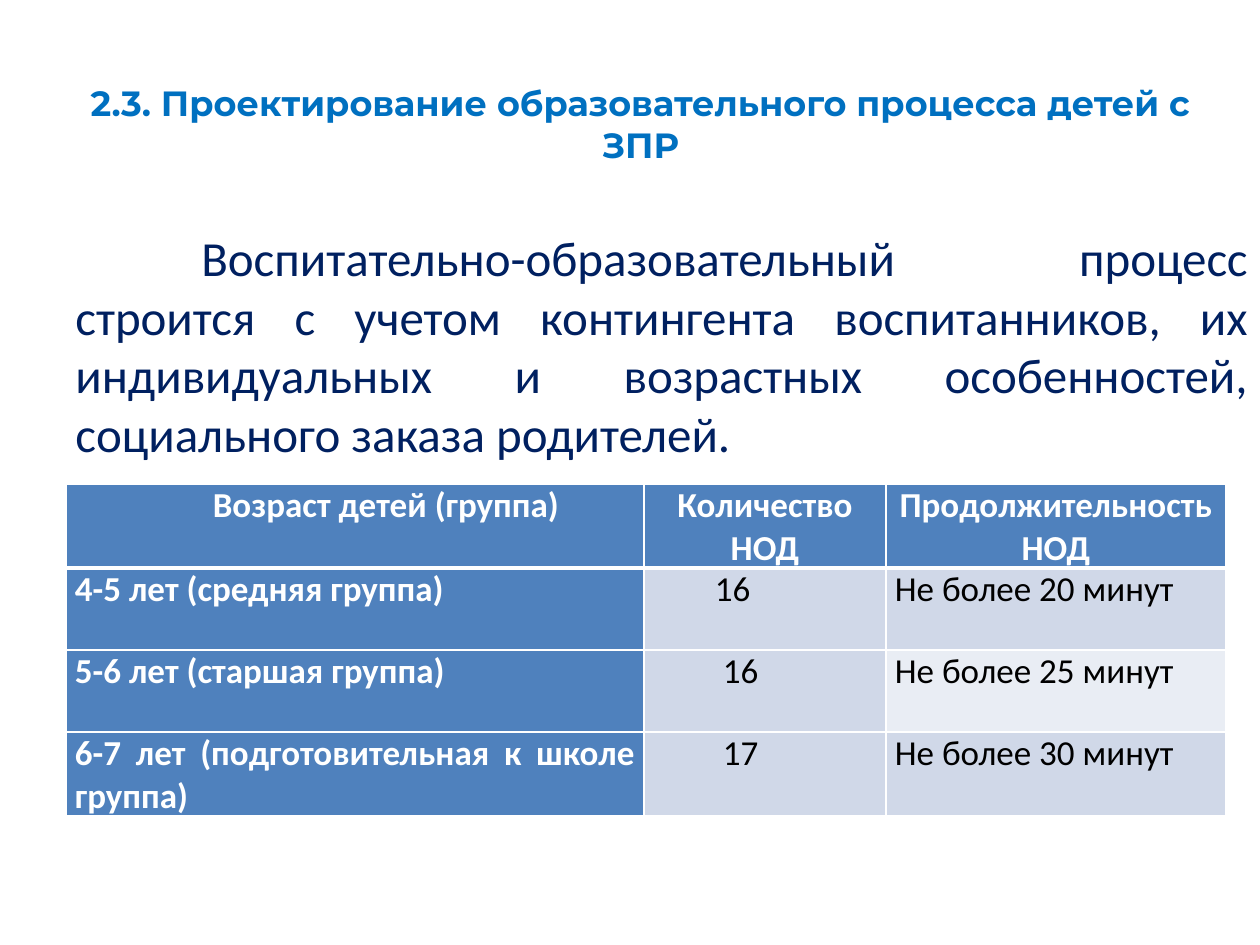
from dataclasses import dataclass

from lxml import etree
from pptx import Presentation
from pptx.dml.color import RGBColor
from pptx.enum.text import MSO_ANCHOR, PP_ALIGN
from pptx.oxml.ns import qn
from pptx.util import Emu, Pt

CENTER, JUSTIFY = PP_ALIGN.CENTER, PP_ALIGN.JUSTIFY
TOP, MIDDLE = MSO_ANCHOR.TOP, MSO_ANCHOR.MIDDLE
PX_PER_INCH = 126


@dataclass(frozen=True)
class Theme:
    heading_font: str = "Montserrat"
    body_font: str = "Calibri"
    heading: str = "0070C0"
    body: str = "002060"
    accent: str = "4F81BD"
    band_dark: str = "D0D8E8"
    band_light: str = "E9EDF4"
    white: str = "FFFFFF"
    black: str = "000000"
    heading_size: int = 20
    body_size: int = 28
    table_size: int = 20
    thin_line: int = 1
    thick_line: int = 3


THEME = Theme()

TITLE = "2.3. Проектирование образовательного процесса детей с ЗПР"
INTRO = (
    "Воспитательно-образовательный процесс строится с учетом контингента "
    "воспитанников, их индивидуальных и возрастных особенностей, "
    "социального заказа родителей."
)
ROWS = [
    ["Возраст детей (группа)", "Количество НОД", "Продолжительность НОД"],
    ["4-5 лет (средняя группа)", "16", "Не более 20 минут"],
    ["5-6 лет (старшая группа)", "16", "Не более 25 минут"],
    ["6-7 лет (подготовительная к школе группа)", "17", "Не более 30 минут"],
]
COLUMN_WIDTHS = [578, 242, 340]
ROW_HEIGHTS = [69, 82, 82, 82]
# First-line indents of table cells, by row and column
CELL_INDENTS = {(0, 0): 62, (1, 1): 62, (2, 1): 70, (3, 1): 70}


def px(length):
    return Emu(round(length * 914400 / PX_PER_INCH))


def style_para(para, align, font, size, color, bold=False, indent=0):
    para.alignment = align
    if indent:
        properties = para._p.get_or_add_pPr()
        properties.set("marL", "0")
        properties.set("indent", str(px(indent)))
    for span in para.runs:
        span.font.name = font
        span.font.size = Pt(size)
        span.font.bold = bold
        span.font.color.rgb = RGBColor.from_string(color)


def place_title(page, left, top, width, height):
    box = page.shapes.title
    box.left, box.top, box.width, box.height = map(px, (left, top, width, height))
    frame = box.text_frame
    frame.text = TITLE
    frame.word_wrap = True
    frame.vertical_anchor = MIDDLE
    frame.margin_bottom = px(46)
    style_para(frame.paragraphs[0], CENTER, THEME.heading_font,
               THEME.heading_size, THEME.heading, bold=True)


def place_intro(page, left, top, width, height):
    box = page.shapes.add_textbox(*map(px, (left, top, width, height)))
    frame = box.text_frame
    frame.text = INTRO
    frame.word_wrap = True
    style_para(frame.paragraphs[0], JUSTIFY, THEME.body_font,
               THEME.body_size, THEME.body, indent=126)


def set_borders(cell, row):
    """Thin white lines all round, with a thick one under the header."""
    weights = {
        "a:lnL": THEME.thin_line,
        "a:lnR": THEME.thin_line,
        "a:lnT": THEME.thick_line if row == 1 else THEME.thin_line,
        "a:lnB": THEME.thick_line if row == 0 else THEME.thin_line,
    }
    properties = cell._tc.get_or_add_tcPr()
    for position, (tag, weight) in enumerate(weights.items()):
        line = etree.Element(qn(tag), w=str(Pt(weight)))
        fill = etree.SubElement(line, qn("a:solidFill"))
        etree.SubElement(fill, qn("a:srgbClr"), val=THEME.white)
        properties.insert(position, line)


def fill_color(row, column):
    if row == 0 or column == 0:
        return THEME.accent
    if row == 2 and column == 2:
        return THEME.band_light
    return THEME.band_dark


def format_cell(cell, text, row, column):
    is_heading = row == 0 or column == 0
    cell.text = text
    cell.margin_left = cell.margin_right = px(9)
    cell.margin_top = cell.margin_bottom = 0
    cell.vertical_anchor = TOP
    cell.fill.solid()
    cell.fill.fore_color.rgb = RGBColor.from_string(fill_color(row, column))
    set_borders(cell, row)
    style_para(cell.text_frame.paragraphs[0], CENTER if row == 0 else JUSTIFY,
               THEME.body_font, THEME.table_size,
               THEME.white if is_heading else THEME.black,
               bold=is_heading, indent=CELL_INDENTS.get((row, column), 0))


def place_schedule(page, left, top):
    size = (sum(COLUMN_WIDTHS), sum(ROW_HEIGHTS))
    table = page.shapes.add_table(len(ROWS), len(COLUMN_WIDTHS),
                                  *map(px, (left, top, *size))).table
    table.first_col = True
    for column, width in zip(table.columns, COLUMN_WIDTHS):
        column.width = px(width)
    for row, (texts, height) in enumerate(zip(ROWS, ROW_HEIGHTS)):
        table.rows[row].height = px(height)
        for column, text in enumerate(texts):
            format_cell(table.cell(row, column), text, row, column)


def main():
    deck = Presentation()
    deck.slide_width, deck.slide_height = px(1260), px(945)
    page = deck.slides.add_slide(deck.slide_layouts[5])
    page.background.fill.solid()
    page.background.fill.fore_color.rgb = RGBColor.from_string(THEME.white)

    # Heading, introduction, then the timetable of lessons
    place_title(page, 35, 66, 1211, 155)
    place_intro(page, 63, 221, 1197, 624)
    place_schedule(page, 66, 484)
    deck.save("out.pptx")


if __name__ == "__main__":
    main()
